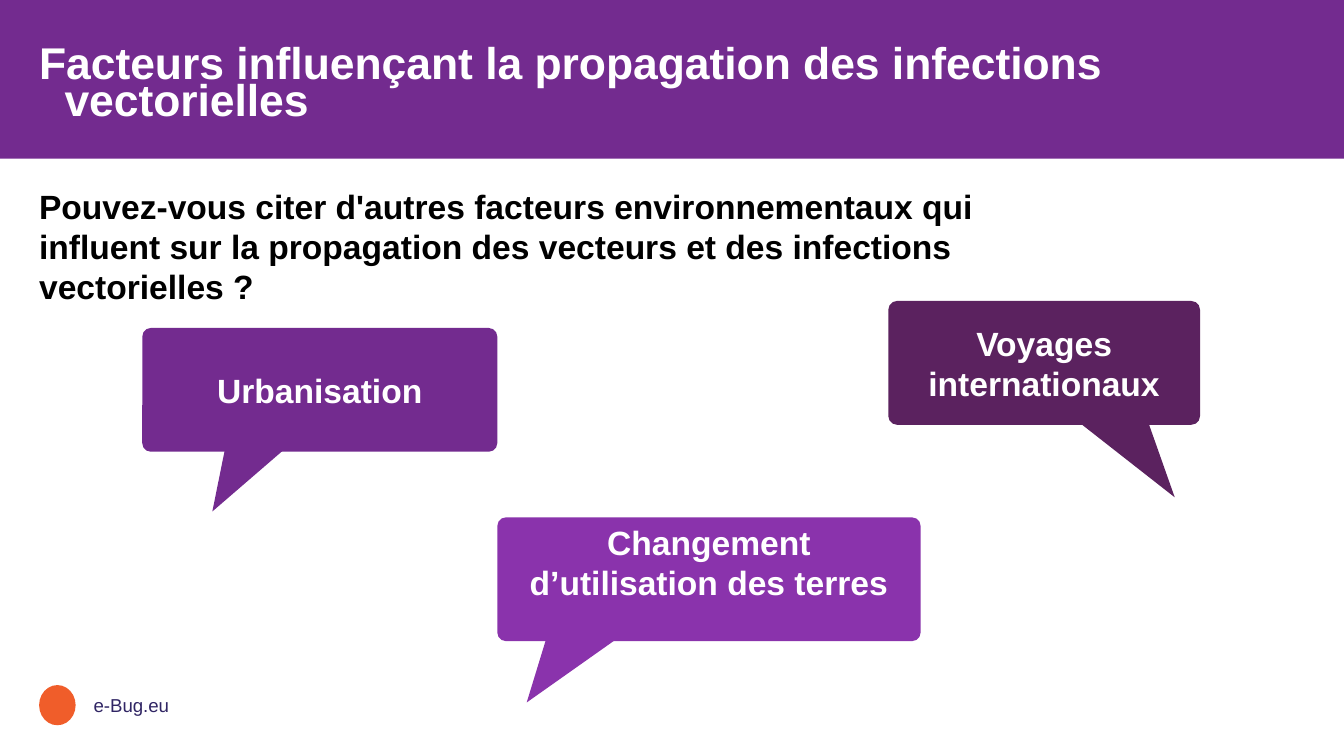
import pptx
import pptx.dml.color
import pptx.enum.shapes
import pptx.enum.text
import pptx.util

Cm = pptx.util.Cm
Shape = pptx.enum.shapes.MSO_SHAPE
Anchor = pptx.enum.text.MSO_ANCHOR
Align = pptx.enum.text.PP_ALIGN

PURPLE = "732B8F"
PLUM = "5B225F"
VIOLET = "8A33AC"
WHITE = "FFFFFF"
MARGIN = 0.74
BUBBLE_HEIGHT = 2.34
BUBBLE_INSETS = (0.5, 0.5, 0.5, 0.5)
TEXT_INSETS = (0, 0.13, 0.25, 0.13)


def color(hex_value):
    return pptx.dml.color.RGBColor.from_string(hex_value)


def add_filled(shapes, preset, box, fill, rotation=0):
    shape = shapes.add_shape(preset, *map(Cm, box))
    shape.shadow.inherit = False
    shape.fill.solid()
    shape.fill.fore_color.rgb = color(fill)
    shape.line.fill.background()
    shape.rotation = rotation
    return shape


def write(shape, text, size, hex_value, insets, bold=True,
          anchor=Anchor.TOP, align=Align.LEFT):
    frame = shape.text_frame
    frame.word_wrap = True
    frame.vertical_anchor = anchor
    (frame.margin_left, frame.margin_top,
     frame.margin_right, frame.margin_bottom) = map(Cm, insets)
    paragraph = frame.paragraphs[0]
    paragraph.alignment = align
    run = paragraph.add_run()
    run.text = text
    run.font.name = "Arial"
    run.font.size = pptx.util.Pt(size)
    run.font.bold = bold
    run.font.color.rgb = color(hex_value)
    return paragraph


def add_text(slide, box, *args, **options):
    return write(slide.shapes.add_textbox(*map(Cm, box)), *args, **options)


def add_bubble(slide, text, left, top, width, fill, tail, rotation,
               insets=BUBBLE_INSETS, anchor=Anchor.MIDDLE):
    bubble = slide.shapes.add_group_shape().shapes
    add_filled(bubble, Shape.ISOSCELES_TRIANGLE, tail, fill, rotation)
    body = add_filled(bubble, Shape.ROUNDED_RECTANGLE,
                      (left, top, width, BUBBLE_HEIGHT), fill)
    body.adjustments[0] = 0.07
    write(body, text, 18, WHITE, insets, anchor=anchor, align=Align.CENTER)


def main():
    deck = pptx.Presentation()
    deck.slide_width, deck.slide_height = Cm(25.4), Cm(14.29)
    slide = deck.slides.add_slide(deck.slide_layouts[6])

    # Header band and title with a hanging indent
    add_filled(slide.shapes, Shape.RECTANGLE, (0, 0, 25.4, 3), PURPLE)
    title = add_text(
        slide, (MARGIN, 0.74, 23.8, 1.8),
        "Facteurs influençant la propagation des infections vectorielles",
        23.8, WHITE, TEXT_INSETS, anchor=Anchor.MIDDLE)
    title.line_spacing = 0.7
    properties = title._p.get_or_add_pPr()
    properties.set("marL", str(Cm(0.48)))
    properties.set("indent", str(-Cm(0.48)))

    # Footer: plain emblem and site address
    add_filled(slide.shapes, Shape.OVAL, (MARGIN, 12.95, 0.69, 0.76), "F05D2A")
    add_text(slide, (1.52, 12.98, 1.93, 0.76), "e-Bug.eu", 10, "302564",
             (0.25, 0.13, 0.25, 0.13), bold=False)

    # Question
    add_text(
        slide, (MARGIN, 3.38, 18.08, 2.57),
        "Pouvez-vous citer d'autres facteurs environnementaux qui influent "
        "sur la propagation des vecteurs et des infections vectorielles ?",
        18, "000000", TEXT_INSETS)

    # Answers in speech bubbles
    add_bubble(slide, "Urbanisation", 2.69, 6.2, 6.71, PURPLE,
               (3.84, 7.87, 1.32, 1.93), 210.3)
    add_bubble(slide, "Voyages internationaux", 16.79, 5.69, 5.89, PLUM,
               (20.96, 7.47, 1.24, 2.13), 144.3)
    add_bubble(slide, "Changement d’utilisation des terres", 9.4, 9.78, 8,
               VIOLET, (9.86, 11.53, 1.32, 1.93), 215.9,
               insets=(0.5, 0.03, 0.5, 0.5), anchor=Anchor.TOP)

    deck.save("out.pptx")


if __name__ == "__main__":
    main()
